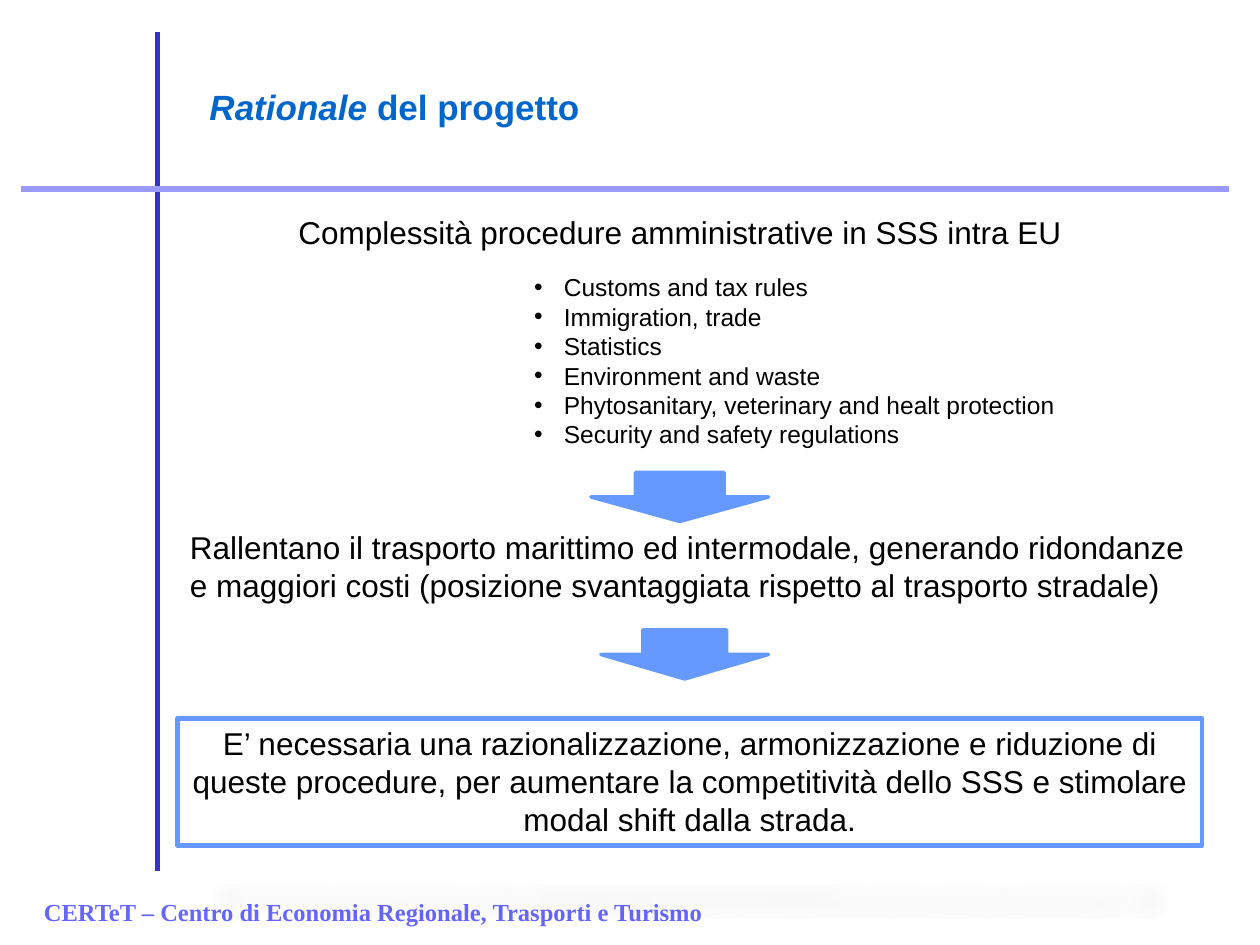
from lxml import etree
from pptx import Presentation
from pptx import util as u
from pptx.dml.color import RGBColor
from pptx.enum import shapes, text
from pptx.oxml import ns

COLORS = {
    "vertical": "3333CC", "horizontal": "9999FF", "footer": "6666FF",
    "title": "0066CC", "accent": "6699FF", "body": "000000",
}
TITLE = [("Rationale", True), (" del progetto", False)]
PROBLEM = "Complessità procedure amministrative in SSS intra EU"
PROCEDURES = [
    "Customs and tax rules",
    "Immigration, trade",
    "Statistics",
    "Environment and waste",
    "Phytosanitary, veterinary and healt protection",
    "Security and safety regulations",
]
EFFECT = (
    "Rallentano il trasporto marittimo ed intermodale, generando ridondanze "
    "e maggiori costi (posizione svantaggiata rispetto al trasporto stradale)"
)
CONCLUSION = (
    "E’ necessaria una razionalizzazione, armonizzazione e riduzione di "
    "queste procedure, per aumentare la competitività dello SSS e stimolare "
    "modal shift dalla strada."
)
FOOTER = "CERTeT – Centro di Economia Regionale, Trasporti e Turismo"

RULES = [
    ((90, 18), (90, 498), "vertical"),
    ((12, 108), (702, 108), "horizontal"),
]
ARROWS = [(337.7, 270, 101.5, 28), (343.4, 360, 95.8, 28)]
COLUMN_LEFT, COLUMN_WIDTH = 101.5, 585.4
BULLET_INDENT = 17


def rgb(name):
    return RGBColor.from_string(COLORS[name])


def add_xml(parent, tag, **attributes):
    child = etree.SubElement(parent, ns.qn(tag))
    for key, value in attributes.items():
        child.set(key, str(value))
    return child


def place(shape, left, top, width, height):
    shape.left, shape.top = u.Pt(left), u.Pt(top)
    shape.width, shape.height = u.Pt(width), u.Pt(height)
    return shape


def write(shape, content, size=18, color="body", font="Arial", bold=False,
          align=text.PP_ALIGN.LEFT, anchor=text.MSO_ANCHOR.TOP, bullets=False):
    frame = shape.text_frame
    frame.word_wrap = True
    frame.auto_size = text.MSO_AUTO_SIZE.NONE
    frame.vertical_anchor = anchor
    lines = [content] if isinstance(content, str) else content
    for index, line in enumerate(lines):
        paragraph = frame.add_paragraph() if index else frame.paragraphs[0]
        paragraph.alignment = align
        paragraph.space_before = u.Pt(0)
        if bullets:
            properties = paragraph._p.get_or_add_pPr()
            properties.set("marL", str(u.Pt(BULLET_INDENT)))
            properties.set("indent", str(-u.Pt(BULLET_INDENT)))
            add_xml(properties, "a:buFont", typeface="Arial")
            add_xml(properties, "a:buChar", char="•")
        runs = [(line, False)] if isinstance(line, str) else line
        for words, italic in runs:
            run = paragraph.add_run()
            run.text = words
            run.font.name, run.font.size = font, u.Pt(size)
            run.font.bold, run.font.italic = bold, italic
            run.font.color.rgb = rgb(color)


def add_rule(slide, start, end, color):
    rule = slide.shapes.add_connector(
        shapes.MSO_CONNECTOR.STRAIGHT, *map(u.Pt, start + end))
    rule.line.color.rgb = rgb(color)
    rule.line.width = u.Pt(3)
    add_xml(rule._element.spPr, "a:effectLst")


def add_box(slide, kind, box, line_width, filled):
    shape = slide.shapes.add_shape(kind, *map(u.Pt, box))
    shape.shadow.inherit = False
    if filled:
        shape.fill.solid()
        shape.fill.fore_color.rgb = rgb("accent")
    else:
        shape.fill.background()
    shape.line.color.rgb = rgb("accent")
    shape.line.width = u.Pt(line_width)
    return shape


def add_shadow_below(shape):
    effects = shape._element.spPr.find(ns.qn("a:effectLst"))
    shadow = add_xml(effects, "a:outerShdw", blurRad=u.Pt(12), dist=u.Pt(25),
                     dir=5400000, sx=90000, sy=-19000, rotWithShape=0)
    tint = add_xml(shadow, "a:srgbClr", val=COLORS["body"])
    add_xml(tint, "a:alpha", val=15000)


def add_text(slide, box, content, **style):
    write(slide.shapes.add_textbox(*map(u.Pt, box)), content, **style)


def main():
    deck = Presentation()
    deck.slide_width, deck.slide_height = u.Pt(720), u.Pt(540)
    slide = deck.slides.add_slide(deck.slide_layouts[1])
    title, procedures = slide.placeholders

    for rule in RULES:
        add_rule(slide, *rule)
    add_text(slide, (18, 509, 576, 24), FOOTER, size=14, color="footer",
             font="Times New Roman", bold=True)

    write(place(title, 112.5, 45, 268.5, 31.5), [TITLE], size=20,
          color="title", bold=True)
    add_text(slide, (163.4, 118, 506, 29), PROBLEM)
    write(place(procedures, 298, 152, 371.5, 108.7), PROCEDURES, size=14,
          bullets=True)
    add_text(slide, (COLUMN_LEFT, 298, COLUMN_WIDTH, 51), EFFECT)

    for arrow in ARROWS:
        add_box(slide, shapes.MSO_SHAPE.DOWN_ARROW, arrow, 2, True)
    conclusion = add_box(slide, shapes.MSO_SHAPE.RECTANGLE,
                         (COLUMN_LEFT, 410.4, COLUMN_WIDTH, 72.7), 2.75, False)
    add_shadow_below(conclusion)
    write(conclusion, CONCLUSION, align=text.PP_ALIGN.CENTER)

    deck.save("out.pptx")


if __name__ == "__main__":
    main()
